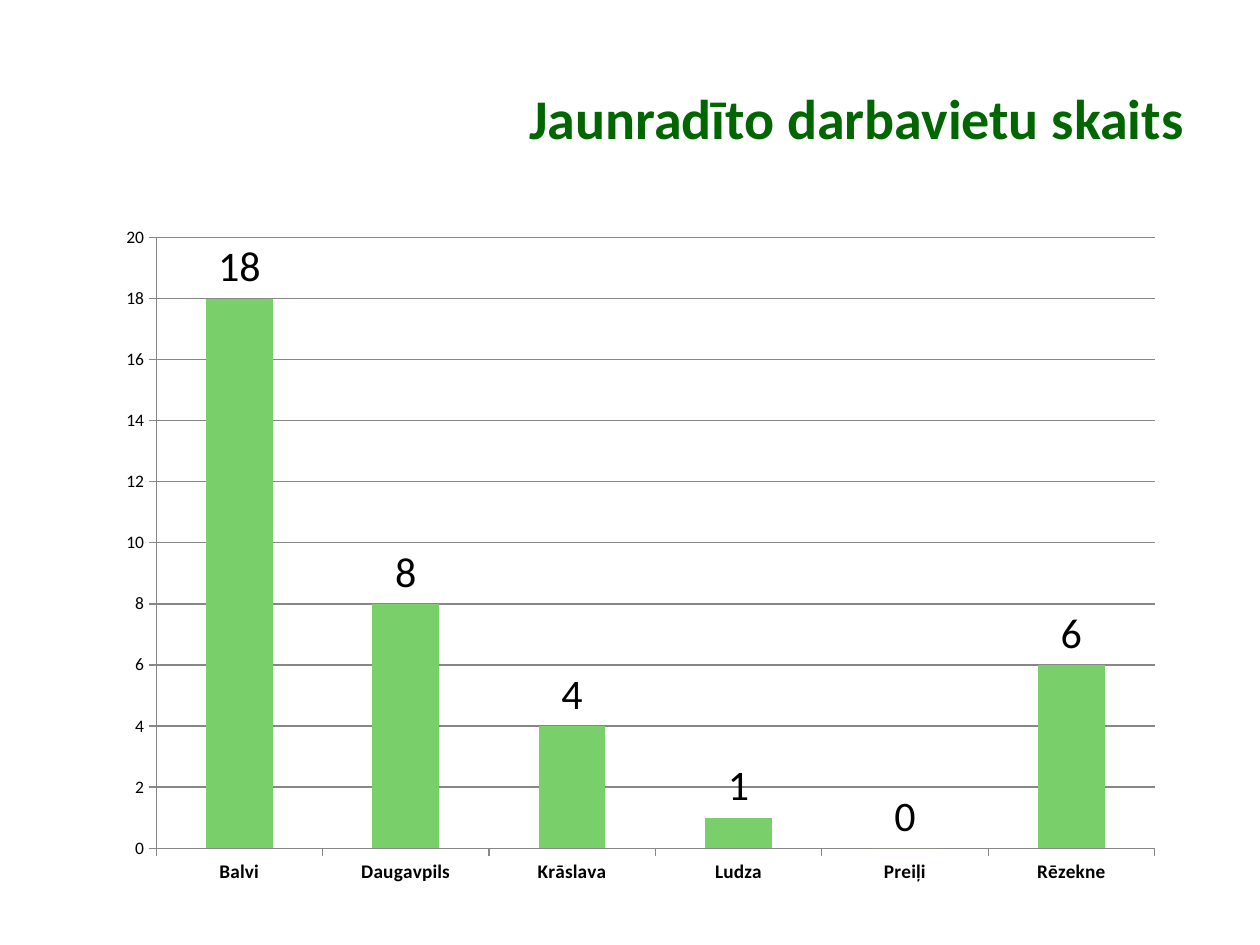
import pptx
import pptx.chart.data
import pptx.dml.color
import pptx.enum.chart
import pptx.enum.text
import pptx.util

SCALE = 914400 // 126
FONT = "Calibri"


def px(num):
    """Turn whole pixels into EMU."""
    return pptx.util.Emu(num * SCALE)


def tint(code):
    """Turn a hex string into a colour."""
    return pptx.dml.color.RGBColor.from_string(code)


def style(font, size, color="000000", bold=False):
    """Set the look of a font."""
    font.name = FONT
    font.size = pptx.util.Pt(size)
    font.bold = bold
    font.color.rgb = tint(color)


def write(frame, text, align=pptx.enum.text.PP_ALIGN.LEFT, **look):
    """Put formatted text into a frame."""
    para = frame.paragraphs[0]
    para.alignment = align
    run = para.add_run()
    run.text = text
    style(run.font, **look)


class Deck:
    """Hold the style and the current slide."""

    green, bar, gray = "006600", "79D06A", "878787"

    def __init__(self):
        """Start a deck with one titled slide."""
        self.file = pptx.Presentation()
        self.file.slide_width = px(1260)
        self.file.slide_height = px(945)
        self.slide = self.file.slides.add_slide(self.file.slide_layouts[5])

    def title(self, text, *box):
        """Fill and place the title."""
        shape = self.slide.shapes.title
        shape.left, shape.top, shape.width, shape.height = map(px, box)
        frame = shape.text_frame
        frame.word_wrap = True
        frame.vertical_anchor = pptx.enum.text.MSO_ANCHOR.MIDDLE
        write(frame, text, align=pptx.enum.text.PP_ALIGN.RIGHT,
              size=32, color=self.green, bold=True)

    def line(self, form):
        """Draw a thin gray line."""
        form.line.color.rgb = tint(self.gray)
        form.line.width = pptx.util.Pt(0.75)

    def columns(self, name, rows, *box):
        """Add a column chart with value labels."""
        enum = pptx.enum.chart
        data = pptx.chart.data.CategoryChartData()
        data.categories = list(rows)
        data.add_series(name, list(rows.values()))
        kind = enum.XL_CHART_TYPE.COLUMN_CLUSTERED
        chart = self.slide.shapes.add_chart(kind, *map(px, box), data).chart
        chart.has_legend = False
        chart.has_title = False
        style(chart.font, 10)
        for axis in (chart.category_axis, chart.value_axis):
            axis.major_tick_mark = enum.XL_TICK_MARK.OUTSIDE
            self.line(axis.format)
        style(chart.category_axis.tick_labels.font, 11, bold=True)
        scale = chart.value_axis
        scale.minimum_scale, scale.maximum_scale, scale.major_unit = 0, 20, 2
        scale.has_major_gridlines = True
        self.line(scale.major_gridlines.format)
        plot = chart.plots[0]
        plot.vary_by_categories = False
        plot.gap_width = 150
        fill = plot.series[0].format.fill
        fill.solid()
        fill.fore_color.rgb = tint(self.bar)
        plot.has_data_labels = True
        marks = plot.data_labels
        marks.show_value = True
        marks.position = enum.XL_LABEL_POSITION.OUTSIDE_END
        style(marks.font, 24)


def main():
    """Build and save the slide."""
    deck = Deck()
    deck.title("Jaunradīto darbavietu skaits", 63, 38, 1134, 158)
    jobs = {"Balvi": 18, "Daugavpils": 8, "Krāslava": 4,
            "Ludza": 1, "Preiļi": 0, "Rēzekne": 6}
    deck.columns("Series 1", jobs, 105, 214, 1071, 684)
    deck.file.save("out.pptx")


if __name__ == "__main__":
    main()
